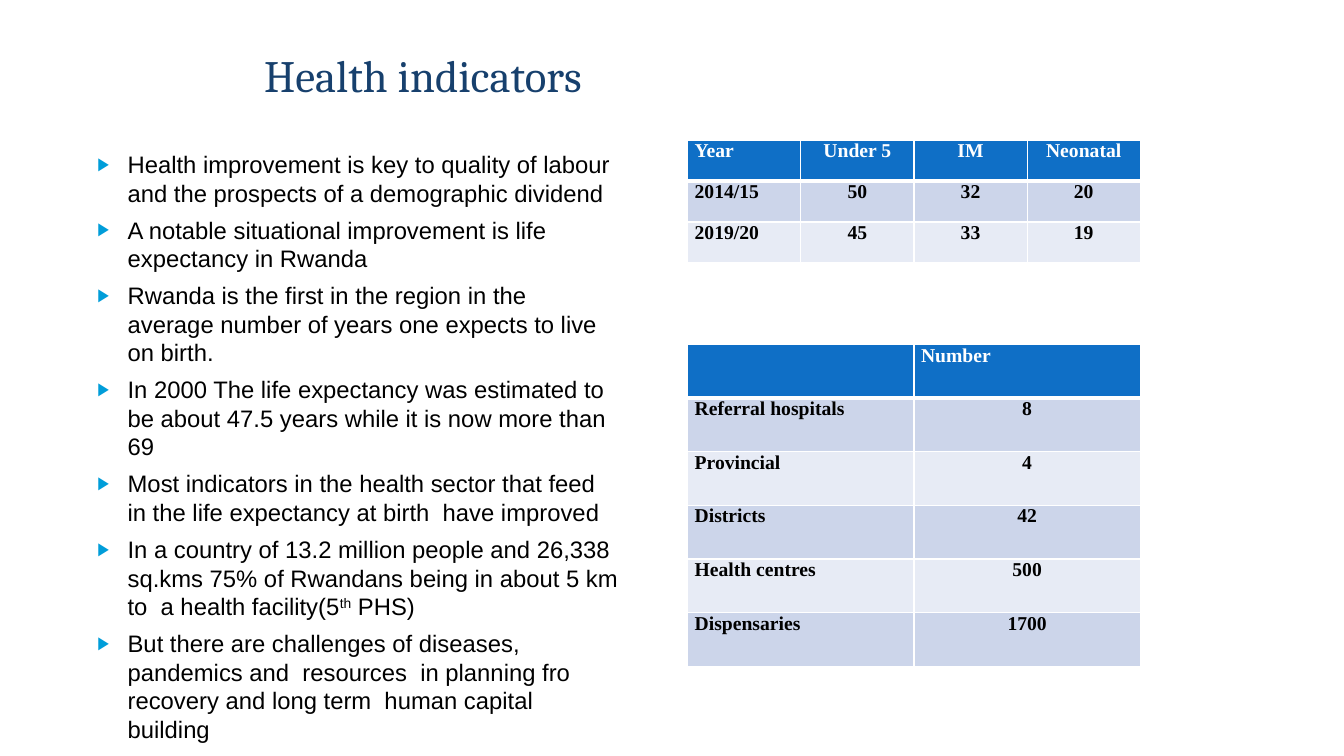
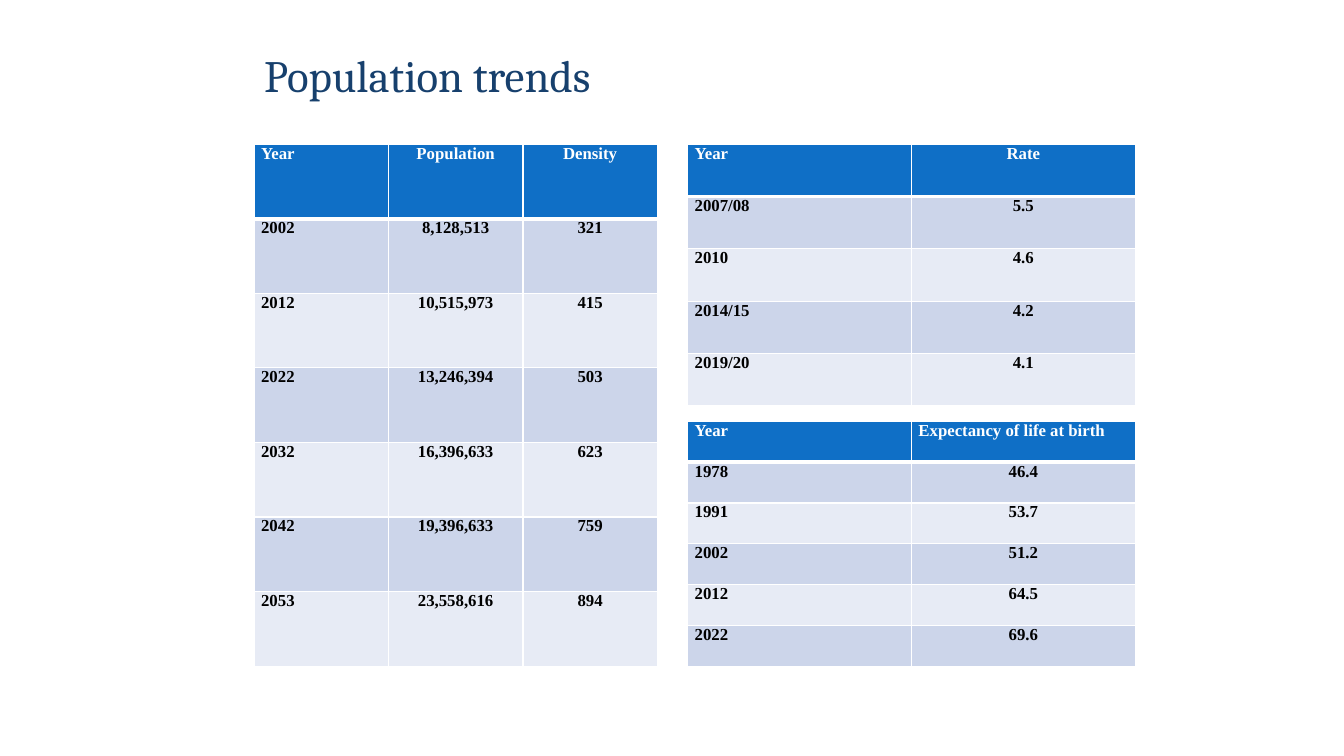
import pptx
import pptx.dml.color
import pptx.enum.text
import pptx.oxml
import pptx.oxml.ns
import pptx.util

RGBColor = pptx.dml.color.RGBColor
ALIGN = pptx.enum.text.PP_ALIGN
Inches, Pt = pptx.util.Inches, pptx.util.Pt
qn = pptx.oxml.ns.qn

NAVY = RGBColor(0x17, 0x40, 0x6D)
BLUE = RGBColor(0x0F, 0x6F, 0xC6)
CYAN = RGBColor(0x00, 0x9D, 0xD9)
BAND_DARK = RGBColor(0xCC, 0xD5, 0xEA)
BAND_LIGHT = RGBColor(0xE7, 0xEB, 0xF5)
WHITE = RGBColor(0xFF, 0xFF, 0xFF)
BLACK = RGBColor(0, 0, 0)

# Grid, in inches: two columns that share a bottom edge
SLIDE_W, SLIDE_H = 13.33, 7.5
BODY_X, LEFT_X, RIGHT_X = 0.58, 2.52, 6.82
LEFT_END = 6.52
BOTTOM = 6.61

HEALTH_POINTS = [
    ["Health improvement is key to quality of labour and the prospects of a "
     "demographic dividend"],
    ["A notable situational improvement is life expectancy in Rwanda"],
    ["Rwanda is the first in the region in the average number of years one "
     "expects to live on birth."],
    ["In 2000 The life expectancy was estimated to be about 47.5 years while "
     "it is now more than 69"],
    ["Most indicators in the health sector that feed in the life expectancy "
     "at birth  have improved"],
    ["In a country of 13.2 million people and 26,338 sq.kms 75% of Rwandans "
     "being in about 5 km to  a health facility(5", "th", " PHS)"],
    ["But there are challenges of diseases, pandemics and  resources  in "
     "planning fro recovery and long term  human capital building"],
]
MORTALITY = [["Year", "Under 5", "IM", "Neonatal"],
             ["2014/15", "50", "32", "20"],
             ["2019/20", "45", "33", "19"]]
FACILITIES = [["", "Number"],
              ["Referral hospitals", "8"],
              ["Provincial", "4"],
              ["Districts", "42"],
              ["Health centres", "500"],
              ["Dispensaries", "1700"]]
FERTILITY = [["Year", "Rate"],
             ["2007/08", "5.5"],
             ["2010", "4.6"],
             ["2014/15", "4.2"],
             ["2019/20", "4.1"]]
LIFE_EXPECTANCY = [["Year", "Expectancy of life at birth"],
                   ["1978", "46.4"],
                   ["1991", "53.7"],
                   ["2002", "51.2"],
                   ["2012", "64.5"],
                   ["2022", "69.6"]]
POPULATION = [["Year", "Population", "Density"],
              ["2002", "8,128,513", "321"],
              ["2012", "10,515,973", "415"],
              ["2022", "13,246,394", "503"],
              ["2032", "16,396,633", "623"],
              ["2042", "19,396,633", "759"],
              ["2053", "23,558,616", "894"]]


def place(sp, x, y, w, h):
    sp.left, sp.top, sp.width, sp.height = map(Inches, (x, y, w, h))


def add_run(p, text, font, size, color, bold=False):
    r = p.add_run()
    r.text = text
    r.font.name, r.font.size, r.font.bold = font, Pt(size), bold
    r.font.color.rgb = color
    return r


def prepare_frame(sp):
    tf = sp.text_frame
    tf.word_wrap = True
    tf.auto_size = pptx.enum.text.MSO_AUTO_SIZE.NONE
    tf.vertical_anchor = pptx.enum.text.MSO_ANCHOR.TOP
    return tf


def add_slide(prs, layout, title, title_h):
    s = prs.slides.add_slide(prs.slide_layouts.get_by_name(layout))
    sp = s.shapes.title
    place(sp, LEFT_X, 0.42, 8.29, title_h)
    p = prepare_frame(sp).paragraphs[0]
    p.alignment = ALIGN.LEFT
    add_run(p, title, "Cambria", 32, NAVY)
    return s


def set_bullet(p):
    pPr = p._p.get_or_add_pPr()
    pPr.set("marL", str(Inches(0.3)))
    pPr.set("indent", str(-Inches(0.3)))
    clr = pptx.oxml.parse_xml(
        '<a:buClr xmlns:a="http://schemas.openxmlformats.org/drawingml/2006/main">'
        f'<a:srgbClr val="{CYAN}"/></a:buClr>')
    pPr.append(clr)
    for tag, key, value in (("a:buSzPct", "val", "76000"),
                            ("a:buFont", "typeface", "Arial"),
                            ("a:buChar", "char", "▶")):
        pPr.makeelement(qn(tag), {key: value})
        pPr.append(pPr.makeelement(qn(tag), {key: value}))


def fill_body(sp, points):
    place(sp, BODY_X, 1.15, LEFT_END - BODY_X, 5.87)
    # Rounded outline, whose corners also inset the text
    geom = pptx.oxml.parse_xml(
        '<a:prstGeom xmlns:a="http://schemas.openxmlformats.org/drawingml/2006/main"'
        ' prst="roundRect"><a:avLst/></a:prstGeom>')
    sp._element.spPr.append(geom)
    sp.fill.solid()
    sp.fill.fore_color.rgb = WHITE
    tf = prepare_frame(sp)
    for i, parts in enumerate(points):
        p = tf.add_paragraph() if i else tf.paragraphs[0]
        p.space_before = Pt(6 if i else 0)
        set_bullet(p)
        for part in parts:
            r = add_run(p, part, "Arial", 17, BLACK)
            if part == "th":
                r.font._element.set("baseline", "30000")


def set_borders(cell, header):
    tcPr = cell._tc.get_or_add_tcPr()
    widths = {"lnL": 1, "lnR": 1, "lnT": 1, "lnB": 3 if header else 1}
    for i, (side, width) in enumerate(widths.items()):
        tcPr.insert(i, pptx.oxml.parse_xml(
            f'<a:{side} xmlns:a="http://schemas.openxmlformats.org/drawingml/2006/main"'
            f' w="{Pt(width)}"><a:solidFill><a:srgbClr val="{WHITE}"/></a:solidFill>'
            f'</a:{side}>'))


def add_banded_table(s, rows, x, y, w, bottom, size, left_heads=()):
    """First column and the headings in left_heads align left, the rest centre."""
    n_rows, n_cols = len(rows), len(rows[0])
    h = bottom - y
    table = s.shapes.add_table(n_rows, n_cols, *map(Inches, (x, y, w, h))).table
    for i, row in enumerate(rows):
        for j, text in enumerate(row):
            cell = table.cell(i, j)
            cell.margin_left = cell.margin_right = Inches(0.07)
            cell.margin_top = cell.margin_bottom = 0
            cell.fill.solid()
            cell.fill.fore_color.rgb = (
                BLUE if i == 0 else BAND_DARK if i % 2 else BAND_LIGHT)
            set_borders(cell, i == 0)
            if not text:
                continue
            p = cell.text_frame.paragraphs[0]
            p.alignment = ALIGN.LEFT if j == 0 or text in left_heads else ALIGN.CENTER
            add_run(p, text, "Times New Roman", size, BLACK if i else WHITE, True)


def main():
    prs = pptx.Presentation()
    prs.slide_width, prs.slide_height = Inches(SLIDE_W), Inches(SLIDE_H)

    # Health indicators
    s = add_slide(prs, "Title and Content", "Health indicators", 0.74)
    fill_body(s.placeholders[1], HEALTH_POINTS)
    add_banded_table(s, MORTALITY, RIGHT_X, 1.39, 4.49, 2.61, 14)
    add_banded_table(s, FACILITIES, RIGHT_X, 3.42, 4.49, BOTTOM, 14, ["Number"])

    # Population trends
    s = add_slide(prs, "Title Only", "Population trends", 0.61)
    add_banded_table(s, FERTILITY, RIGHT_X, 1.43, 4.44, 4.03, 12)
    add_banded_table(s, LIFE_EXPECTANCY, RIGHT_X, 4.18, 4.44, BOTTOM, 12,
                     ["Expectancy of life at birth"])
    add_banded_table(s, POPULATION, LEFT_X, 1.43, LEFT_END - LEFT_X, BOTTOM, 12)

    prs.save("out.pptx")


if __name__ == "__main__":
    main()
